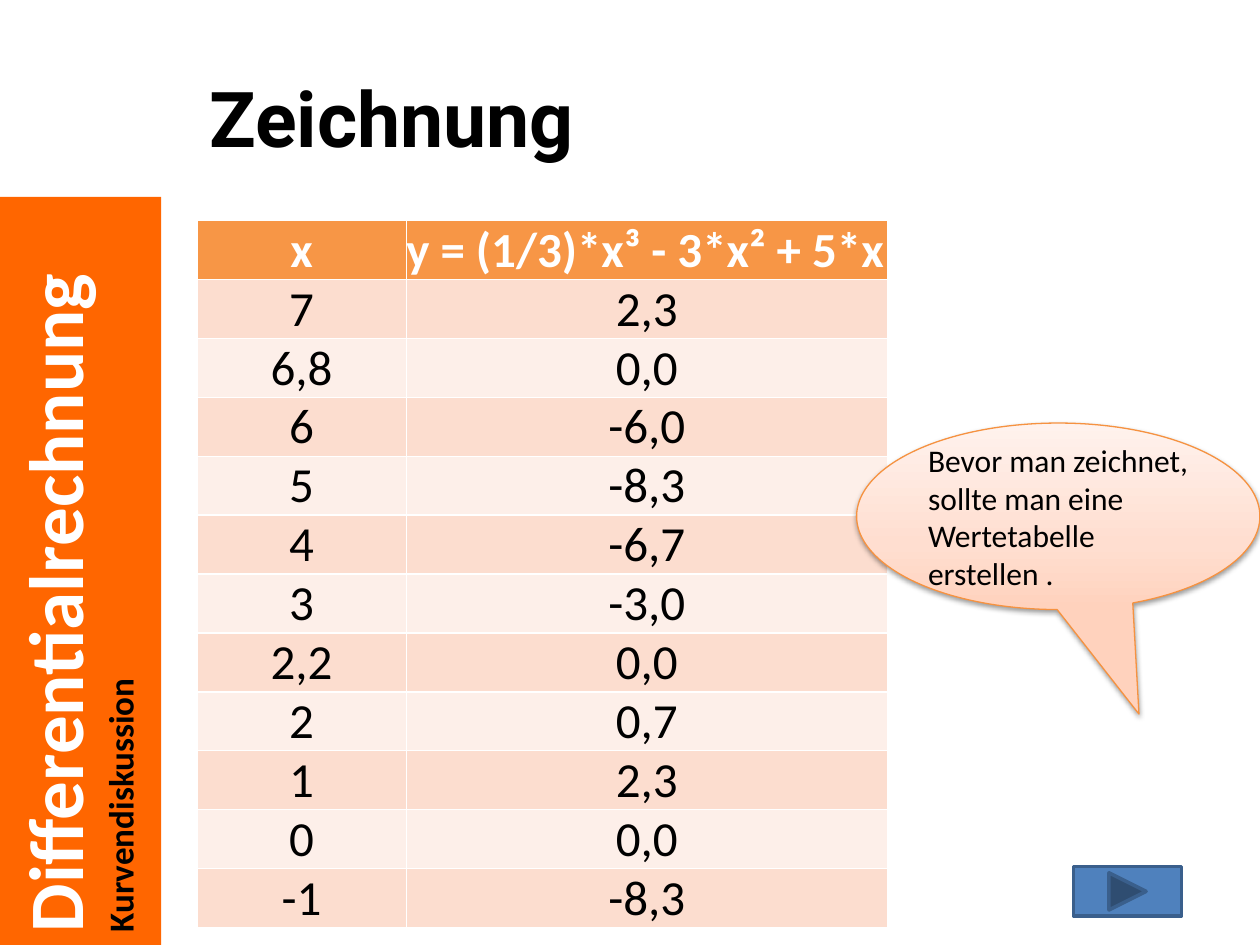
from copy import deepcopy
from dataclasses import dataclass

from pptx import Presentation
from pptx.dml.color import RGBColor
from pptx.enum.shapes import MSO_SHAPE
from pptx.enum.text import MSO_ANCHOR, PP_ALIGN
from pptx.oxml import parse_xml
from pptx.oxml.ns import nsdecls, qn
from pptx.util import Cm, Pt

BLACK, WHITE = "000000", "FFFFFF"
BANDS = ("FDEFE9", "FCDDCF")
HEAD = ("x", "y = (1/3)*x³ - 3*x² + 5*x")
VALUES = (
    ("7", "2,3"), ("6,8", "0,0"), ("6", "-6,0"), ("5", "-8,3"),
    ("4", "-6,7"), ("3", "-3,0"), ("2,2", "0,0"), ("2", "0,7"),
    ("1", "2,3"), ("0", "0,0"), ("-1", "-8,3"),
)
WIDTHS = (4.22, 9.7)
STOPS = ((0, "FFD2BD"), (0.35, "FFDED0"), (1, "FFF2ED"))
SHADOW = (
    f'<a:effectLst {nsdecls("a")}>'
    '<a:outerShdw blurRad="40000" dist="20000" dir="5400000" rotWithShape="0">'
    '<a:srgbClr val="000000"><a:alpha val="38000"/></a:srgbClr>'
    "</a:outerShdw></a:effectLst>"
)


@dataclass
class Box:
    """Left, top, width and height in centimetres."""
    x: float
    y: float
    w: float
    h: float

    def place(self):
        return Cm(self.x), Cm(self.y), Cm(self.w), Cm(self.h)


SIDE = Box(0, 3.97, 3.25, 15.08)
TITLE = Box(3.97, 0.76, 20.16, 3.18)
TABLE = Box(3.97, 4.45, sum(WIDTHS), 14.22)
BUBBLE = Box(17.27, 8.53, 8.13, 3.76)
NEXT = Box(21.64, 17.47, 2.18, 1)


def color(code: str) -> RGBColor:
    return RGBColor.from_string(code)


def write(par, text, size=28, font="Calibri", ink=BLACK, bold=False,
          align=PP_ALIGN.LEFT):
    par.alignment = align
    run = par.add_run()
    run.text = text
    run.font.size = Pt(size)
    run.font.name = font
    run.font.bold = bold
    run.font.color.rgb = color(ink)


def add_shape(slide, kind, box: Box, fill=None, line=None, width=1.0):
    shape = slide.shapes.add_shape(kind, *box.place())
    shape.shadow.inherit = False
    if fill:
        shape.fill.solid()
        shape.fill.fore_color.rgb = color(fill)
    if line:
        shape.line.color.rgb = color(line)
        shape.line.width = Pt(width)
    else:
        shape.line.fill.background()
    return shape


def add_side(slide):
    frame = add_shape(slide, MSO_SHAPE.RECTANGLE, SIDE, "FF6600").text_frame
    frame.vertical_anchor = MSO_ANCHOR.TOP
    frame._txBody.bodyPr.set("vert", "vert270")
    write(frame.paragraphs[0], "Differentialrechnung", 44, ink=WHITE, bold=True)
    write(frame.add_paragraph(), "Kurvendiskussion", 20, bold=True)


def add_title(slide):
    frame = slide.shapes.add_textbox(*TITLE.place()).text_frame
    frame.word_wrap = True
    frame.vertical_anchor = MSO_ANCHOR.MIDDLE
    write(frame.paragraphs[0], "Zeichnung", 44, "Roboto", bold=True)


def fill_cell(cell, text: str, fill: str, **form):
    cell.fill.solid()
    cell.fill.fore_color.rgb = color(fill)
    cell.margin_left = cell.margin_right = 0
    cell.margin_top = cell.margin_bottom = 0
    cell.vertical_anchor = MSO_ANCHOR.BOTTOM
    write(cell.text_frame.paragraphs[0], text, **form)


def add_values(slide):
    count = len(VALUES) + 1
    table = slide.shapes.add_table(count, len(HEAD), *TABLE.place()).table
    for col, width in zip(table.columns, WIDTHS):
        col.width = Cm(width)
    aligns = (PP_ALIGN.CENTER, PP_ALIGN.LEFT)
    for c, (text, align) in enumerate(zip(HEAD, aligns)):
        fill_cell(table.cell(0, c), text, "F79646", ink=WHITE, bold=True,
                  align=align)
    for r, row in enumerate(VALUES, 1):
        for c, text in enumerate(row):
            fill_cell(table.cell(r, c), text, BANDS[r % 2],
                      align=PP_ALIGN.CENTER)


def add_bubble(slide):
    shape = add_shape(slide, MSO_SHAPE.OVAL_CALLOUT, BUBBLE,
                      line="F69240", width=0.75)
    shape.adjustments[0] = 0.2
    shape.adjustments[1] = 1.06
    shape.fill.gradient()
    shape.fill.gradient_angle = 90
    props = shape._element.spPr
    first = props.find(qn("a:gradFill")).gsLst[0]
    first.addnext(deepcopy(first))
    for stop, (place, code) in zip(shape.fill.gradient_stops, STOPS):
        stop.position = place
        stop.color.rgb = color(code)
    props.replace(props.find(qn("a:effectLst")), parse_xml(SHADOW))
    frame = shape.text_frame
    frame.word_wrap = True
    frame.vertical_anchor = MSO_ANCHOR.MIDDLE
    write(frame.paragraphs[0],
          "Bevor man zeichnet, sollte man eine Wertetabelle erstellen .", 18)


def main():
    deck = Presentation()
    deck.slide_width, deck.slide_height = Cm(25.4), Cm(19.05)
    slide = deck.slides.add_slide(deck.slide_layouts[6])
    add_side(slide)
    add_title(slide)
    add_values(slide)
    add_bubble(slide)
    add_shape(slide, MSO_SHAPE.ACTION_BUTTON_FORWARD_OR_NEXT, NEXT,
              "4F81BD", "3A5F8C", 2)
    deck.save("out.pptx")


if __name__ == "__main__":
    main()
